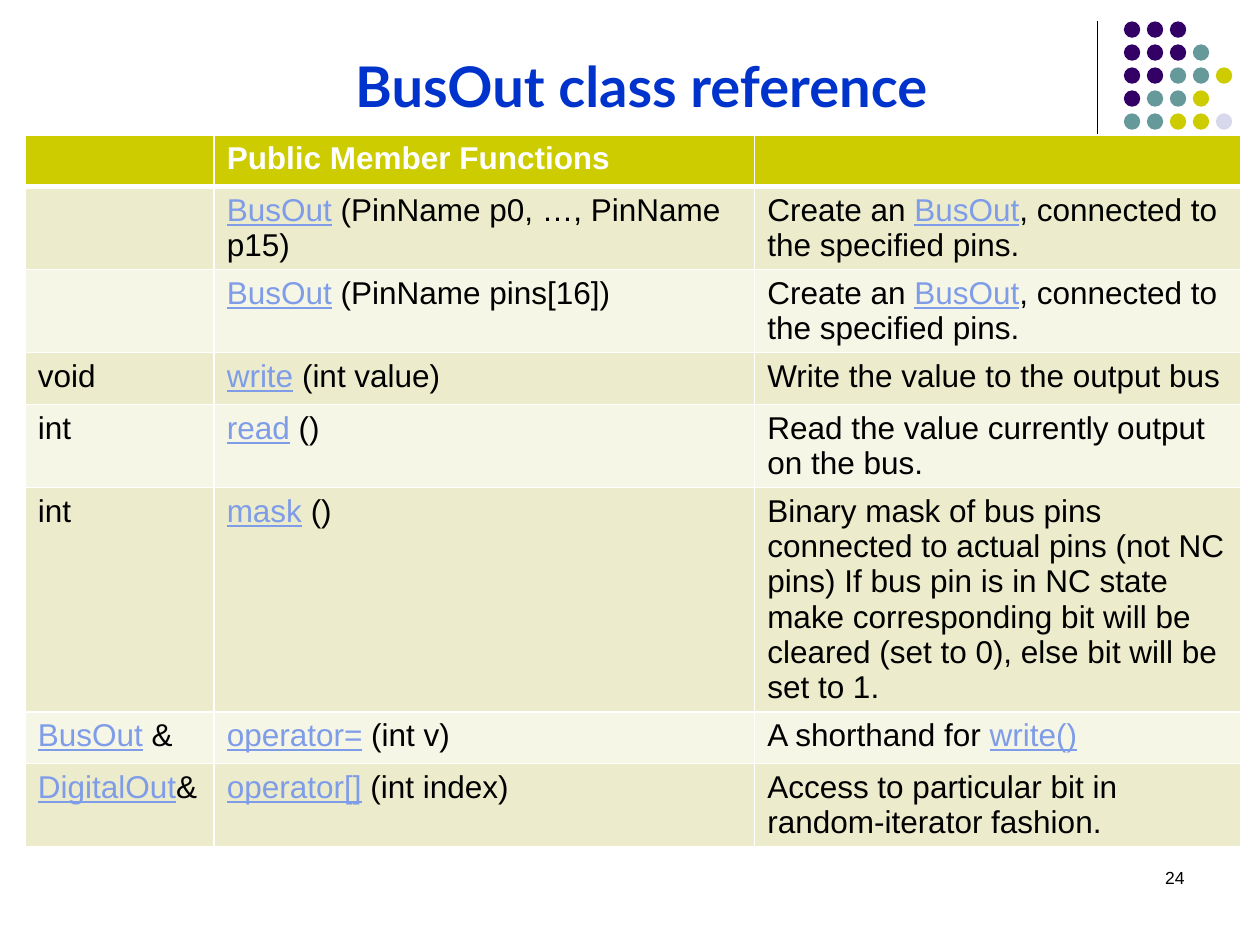
from dataclasses import dataclass

from lxml import etree
from pptx import Presentation
from pptx import util as u
from pptx.dml.color import RGBColor
from pptx.enum import shapes, text
from pptx.oxml import ns


@dataclass(frozen=True)
class Theme:
    heading_font: str = "Lato"
    body_font: str = "Arial"
    title_size: int = 32
    table_size: int = 18
    number_size: int = 10
    title: str = "0033CC"
    body: str = "000000"
    link: str = "7E9CE8"
    white: str = "FFFFFF"
    header: str = "CCCC00"
    bands: tuple = ("ECECCC", "F6F6E7")


THEME = Theme()

# Corner dots: one letter per dot, a space where there is none
DOT_COLORS = {"P": "330066", "T": "669999", "Y": "CCCC00", "L": "D8D8EC"}
DOT_ROWS = ["PPP", "PPPT", "PPTTY", "PTTY", "TTYYL"]
DOT_SIZE = 0.13
DOT_PITCH = 0.73 / 4

# Table text: words between asterisks are shown as links
COLUMN_WIDTHS = [1.5, 4.29, 3.86]
ROW_HEIGHT = 0.41
LINE_HEIGHT = 0.28
ROW_PADDING = 0.1
LINES_PER_ROW = [1, 2, 2, 1, 2, 6, 1, 2]
HEADER = ["", "Public Member Functions", ""]
MEMBERS = [
    ["", "*BusOut* (PinName p0, …, PinName p15)",
     "Create an *BusOut*, connected to the specified pins."],
    ["", "*BusOut* (PinName pins[16])",
     "Create an *BusOut*, connected to the specified pins."],
    ["void", "*write* (int value)", "Write the value to the output bus"],
    ["int", "*read* ()", "Read the value currently output on the bus."],
    ["int", "*mask* ()",
     "Binary mask of bus pins connected to actual pins (not NC pins) "
     "If bus pin is in NC state make corresponding bit will be cleared "
     "(set to 0), else bit will be set to 1."],
    ["*BusOut* &", "*operator=* (int v)", "A shorthand for *write()*"],
    ["*DigitalOut*&", "*operator[]* (int index)",
     "Access to particular bit in random-iterator fashion."],
]


def add_run(paragraph, words, color, **font_values):
    run = paragraph.add_run()
    run.text = words
    run.font.color.rgb = RGBColor.from_string(color)
    for name, value in font_values.items():
        setattr(run.font, name, value)


def add_text(slide, box, words, color, frame_values, alignment, **font_values):
    frame = slide.shapes.add_textbox(*map(u.Inches, box)).text_frame
    for name, value in frame_values.items():
        setattr(frame, name, value)
    paragraph = frame.paragraphs[0]
    paragraph.alignment = alignment
    add_run(paragraph, words, color, **font_values)


def add_rule(slide, x, top, bottom):
    line = slide.shapes.add_connector(
        shapes.MSO_CONNECTOR.STRAIGHT,
        *map(u.Inches, (x, top, x, bottom)))
    line.line.color.rgb = RGBColor.from_string(THEME.body)
    line.line.width = u.Pt(0.75)
    etree.SubElement(line._element.spPr, ns.qn("a:effectLst"))


def add_dots(slide, left, top):
    for row, letters in enumerate(DOT_ROWS):
        for column, letter in enumerate(letters):
            dot = slide.shapes.add_shape(
                shapes.MSO_SHAPE.OVAL,
                u.Inches(left + column * DOT_PITCH),
                u.Inches(top + row * DOT_PITCH),
                u.Inches(DOT_SIZE), u.Inches(DOT_SIZE))
            dot.shadow.inherit = False
            dot.fill.solid()
            dot.fill.fore_color.rgb = RGBColor.from_string(DOT_COLORS[letter])
            dot.line.fill.background()


def set_borders(cell, widths):
    properties = cell._tc.get_or_add_tcPr()
    for side, points in widths.items():
        border = etree.SubElement(
            properties, ns.qn(f"a:ln{side}"), w=str(u.Pt(points)))
        fill = etree.SubElement(border, ns.qn("a:solidFill"))
        etree.SubElement(fill, ns.qn("a:srgbClr"), val=THEME.white)


def fill_cell(cell, words, row):
    is_header = row == 0
    cell.margin_bottom = 0
    set_borders(cell, {"L": 1, "R": 1, "T": 3 if row == 1 else 1,
                       "B": 3 if is_header else 1})
    background = THEME.header if is_header else THEME.bands[(row - 1) % 2]
    cell.fill.solid()
    cell.fill.fore_color.rgb = RGBColor.from_string(background)
    plain = THEME.white if is_header else THEME.body
    paragraph = cell.text_frame.paragraphs[0]
    for index, part in enumerate(words.split("*")):
        is_link = index % 2 == 1
        if part:
            add_run(paragraph, part, THEME.link if is_link else plain,
                    name=THEME.body_font, size=u.Pt(THEME.table_size),
                    bold=is_header, underline=is_link)


def add_member_table(slide, left, top):
    rows = [HEADER] + MEMBERS
    heights = [max(ROW_HEIGHT, ROW_PADDING + LINE_HEIGHT * lines)
               for lines in LINES_PER_ROW]
    table = slide.shapes.add_table(
        len(rows), len(COLUMN_WIDTHS), u.Inches(left), u.Inches(top),
        u.Inches(sum(COLUMN_WIDTHS)), u.Inches(sum(heights))).table
    table.horz_banding = False
    for column, width in zip(table.columns, COLUMN_WIDTHS):
        column.width = u.Inches(width)
    for row, entries in enumerate(rows):
        table.rows[row].height = u.Inches(heights[row])
        for column, words in enumerate(entries):
            fill_cell(table.cell(row, column), words, row)


def main():
    presentation = Presentation()
    presentation.slide_width = u.Inches(10)
    presentation.slide_height = u.Inches(7.5)
    slide = presentation.slides.add_slide(presentation.slide_layouts[6])

    # Corner decoration
    add_rule(slide, 8.71, 0.17, 1.83)
    add_dots(slide, 8.92, 0.17)

    # Class members
    add_member_table(slide, 0.2, 1.07)

    # Slide number
    add_text(slide, (7.17, 6.83, 2.33, 0.5), "24", THEME.body,
             {"word_wrap": True}, text.PP_ALIGN.RIGHT,
             name=THEME.body_font, size=u.Pt(THEME.number_size))

    # Title
    add_text(slide, (2.72, 0.36, 5.21, 0.64), "BusOut class reference",
             THEME.title,
             {"word_wrap": False,
              "auto_size": text.MSO_AUTO_SIZE.SHAPE_TO_FIT_TEXT},
             text.PP_ALIGN.LEFT, name=THEME.heading_font,
             size=u.Pt(THEME.title_size), bold=True)

    presentation.save("out.pptx")


if __name__ == "__main__":
    main()
